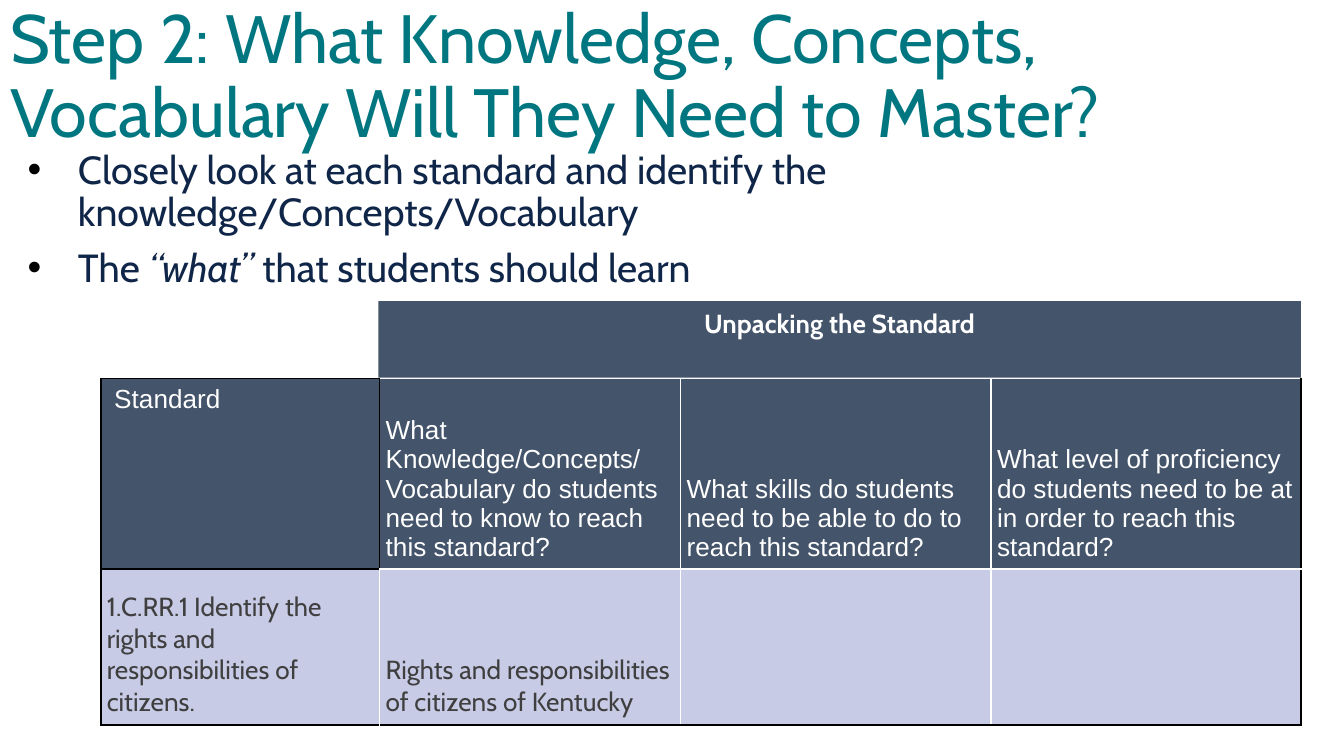
from dataclasses import dataclass

from lxml import etree
from pptx import Presentation
from pptx.dml.color import RGBColor
from pptx.enum.shapes import MSO_SHAPE
from pptx.enum.text import MSO_ANCHOR, MSO_AUTO_SIZE, PP_ALIGN
from pptx.oxml.ns import qn
from pptx.util import Emu, Pt

PX = 4572  # 200 px to the inch
TITLE_ONLY = 5
TOP, BOTTOM = MSO_ANCHOR.TOP, MSO_ANCHOR.BOTTOM
LEFT, CENTER = PP_ALIGN.LEFT, PP_ALIGN.CENTER
NO_AUTOFIT = MSO_AUTO_SIZE.NONE
RECTANGLE = MSO_SHAPE.RECTANGLE

WHITE, BLACK, SLATE, LILAC = "FFFFFF", "000000", "44546A", "C8CBE6"
TEAL, NAVY, GRAY = "007780", "102649", "3F3F3F"

COLUMN_WIDTHS = (415, 448, 462, 461)
ROW_HEIGHTS = (284, 232)


@dataclass(frozen=True)
class TextStyle:
    size: float
    color: str
    name: str = "Cabin"
    bold: bool = False


@dataclass(frozen=True)
class Cell:
    text: str
    fill: str
    style: TextStyle
    borders: tuple[str, str, str, str]  # left, right, top, bottom
    anchor: MSO_ANCHOR = BOTTOM
    side_margin: int = 9


TITLE = TextStyle(36.6, TEAL)
BODY = TextStyle(21, NAVY)
BANNER = TextStyle(14, WHITE, bold=True)
HEADING = TextStyle(14, WHITE, "Arial")
ENTRY = TextStyle(14, GRAY)

BULLETS = (
    (("Closely look at each standard and identify the "
      "knowledge/Concepts/Vocabulary", False),),
    (("The ", False), ("“what”", True), (" that students should learn", False)),
)

ROWS = (
    (
        Cell("Standard", SLATE, HEADING, (BLACK,) * 4, TOP, 20),
        Cell("What Knowledge/Concepts/ Vocabulary do students need to know "
             "to reach this standard?", SLATE, HEADING,
             (BLACK, WHITE, WHITE, WHITE)),
        Cell("What skills do students need to be able to do to reach this "
             "standard?", SLATE, HEADING, (WHITE,) * 4),
        Cell("What level of proficiency do students need to be at in order "
             "to reach this standard?", SLATE, HEADING,
             (WHITE, BLACK, WHITE, WHITE)),
    ),
    (
        Cell("1.C.RR.1 Identify the rights and responsibilities of citizens.",
             LILAC, ENTRY, (BLACK, WHITE, BLACK, BLACK)),
        Cell("Rights and responsibilities of citizens of Kentucky",
             LILAC, ENTRY, (WHITE, WHITE, WHITE, BLACK)),
        Cell("", LILAC, ENTRY, (WHITE, WHITE, WHITE, BLACK)),
        Cell("", LILAC, ENTRY, (WHITE, BLACK, WHITE, BLACK)),
    ),
)


def px(length: int) -> Emu:
    return Emu(length * PX)


def rgb(color: str) -> RGBColor:
    return RGBColor.from_string(color)


def set_all(target, values: dict) -> None:
    for name, value in values.items():
        setattr(target, name, value)


def format_font(font, style: TextStyle) -> None:
    set_all(font, {"size": Pt(style.size), "name": style.name,
                   "bold": style.bold})
    font.color.rgb = rgb(style.color)


def format_frame(frame, side: int, edge: int) -> None:
    set_all(frame, {"margin_left": px(side), "margin_right": px(side),
                    "margin_top": px(edge), "margin_bottom": px(edge),
                    "vertical_anchor": TOP, "word_wrap": True,
                    "auto_size": NO_AUTOFIT})


def add_bullet(para) -> None:
    """Give the paragraph a black bullet and a hanging indent."""
    properties = para._p.get_or_add_pPr()
    properties.set("marL", str(px(75)))
    properties.set("indent", str(px(-75)))
    color = etree.SubElement(properties, qn("a:buClr"))
    etree.SubElement(color, qn("a:srgbClr"), val=BLACK)
    etree.SubElement(properties, qn("a:buFont"), typeface="Arial")
    etree.SubElement(properties, qn("a:buChar"), char="•")


def add_title(page) -> None:
    title = page.shapes.title
    set_all(title, {"left": px(0), "top": px(0),
                    "width": px(1858), "height": px(216)})
    format_frame(title.text_frame, 15, 7)
    para = title.text_frame.paragraphs[0]
    set_all(para, {"alignment": LEFT, "line_spacing": 0.9})
    span = para.add_run()
    span.text = ("Step 2: What Knowledge, Concepts, Vocabulary "
                 "Will They Need to Master?")
    format_font(span.font, TITLE)


def add_bullets(page) -> None:
    box = page.shapes.add_textbox(px(26), px(216), px(1804), px(804))
    frame = box.text_frame
    format_frame(frame, 15, 8)
    for index, pieces in enumerate(BULLETS):
        para = frame.add_paragraph() if index else frame.paragraphs[0]
        add_bullet(para)
        set_all(para, {"line_spacing": 0.9, "space_before": Pt(7 * index)})
        for text, italic in pieces:
            span = para.add_run()
            span.text = text
            format_font(span.font, BODY)
            span.font.italic = italic


def add_borders(properties, colors: tuple[str, str, str, str]) -> None:
    """Put the four border lines ahead of the cell's fill."""
    for index, (side, color) in enumerate(zip("LRTB", colors)):
        line = etree.Element(qn(f"a:ln{side}"), w=str(Pt(1)))
        fill = etree.SubElement(line, qn("a:solidFill"))
        etree.SubElement(fill, qn("a:srgbClr"), val=color)
        properties.insert(index, line)


def fill_cell(cell, content: Cell) -> None:
    set_all(cell, {"margin_left": px(content.side_margin),
                   "margin_right": px(content.side_margin),
                   "margin_top": px(10), "margin_bottom": px(10),
                   "vertical_anchor": content.anchor})
    cell.fill.solid()
    cell.fill.fore_color.rgb = rgb(content.fill)
    add_borders(cell._tc.get_or_add_tcPr(), content.borders)
    if content.text:
        span = cell.text_frame.paragraphs[0].add_run()
        span.text = content.text
        format_font(span.font, content.style)


def add_standards_table(page) -> None:
    table = page.shapes.add_table(
        len(ROW_HEIGHTS), len(COLUMN_WIDTHS), px(150), px(563),
        px(sum(COLUMN_WIDTHS)), px(sum(ROW_HEIGHTS))).table
    set_all(table, {"first_row": False, "horz_banding": False})
    for column, width in zip(table.columns, COLUMN_WIDTHS):
        column.width = px(width)
    for row, height, contents in zip(table.rows, ROW_HEIGHTS, ROWS):
        row.height = px(height)
        for cell, content in zip(row.cells, contents):
            fill_cell(cell, content)


def add_banner(page) -> None:
    banner = page.shapes.add_shape(
        RECTANGLE, px(563), px(448), px(1373), px(114))
    banner.shadow.inherit = False
    banner.fill.solid()
    banner.fill.fore_color.rgb = rgb(SLATE)
    banner.line.fill.background()
    format_frame(banner.text_frame, 20, 10)
    para = banner.text_frame.paragraphs[0]
    para.alignment = CENTER
    span = para.add_run()
    span.text = "Unpacking the Standard"
    format_font(span.font, BANNER)


def main() -> None:
    deck = Presentation()
    set_all(deck, {"slide_width": px(2000), "slide_height": px(1125)})
    page = deck.slides.add_slide(deck.slide_layouts[TITLE_ONLY])
    add_title(page)
    add_bullets(page)
    add_standards_table(page)
    add_banner(page)
    deck.save("out.pptx")


if __name__ == "__main__":
    main()
